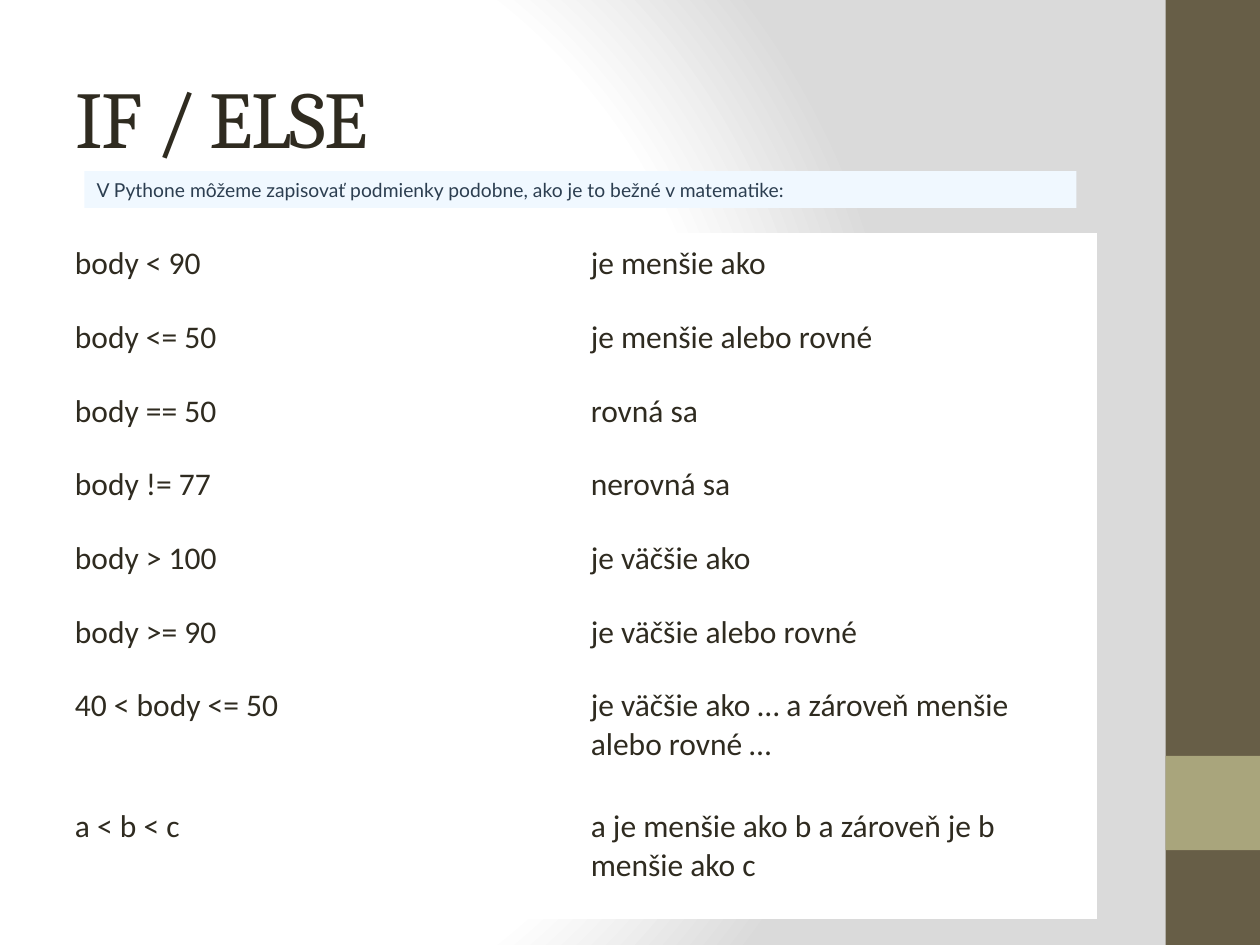
from lxml import etree
from pptx import Presentation
from pptx.dml.color import RGBColor
from pptx.enum import shapes, text
from pptx.oxml import ns
from pptx.util import Cm, Pt

INK = "2F2B20"
COMPARISONS = [
    ("body < 90", "je menšie ako"),
    ("body <= 50", "je menšie alebo rovné"),
    ("body == 50", "rovná sa"),
    ("body != 77", "nerovná sa"),
    ("body > 100", "je väčšie ako"),
    ("body >= 90", "je väčšie alebo rovné"),
    ("40 < body <= 50", "je väčšie ako … a zároveň menšie alebo rovné …"),
    ("a < b < c", "a je menšie ako b a zároveň je b menšie ako c"),
]


def paint(fill, color):
    fill.solid()
    fill.fore_color.rgb = RGBColor.from_string(color)


def add_text(frame, content, size, font, color):
    paragraph = frame.paragraphs[0]
    paragraph.alignment = text.PP_ALIGN.LEFT
    run = paragraph.add_run()
    run.text = content
    run.font.size = Pt(size)
    run.font.name = font
    run.font.color.rgb = RGBColor.from_string(color)
    return run


def add_block(slide, left, top, width, height, color):
    block = slide.shapes.add_shape(
        shapes.MSO_SHAPE.RECTANGLE, Cm(left), Cm(top), Cm(width), Cm(height))
    block.shadow.inherit = False
    paint(block.fill, color)
    block.line.fill.background()
    return block


def add_background(slide):
    fill = slide.background.fill
    fill.gradient()
    gradient = slide.background._cSld.find(".//" + ns.qn("a:gradFill"))
    for child in list(gradient):
        gradient.remove(child)
    stops = etree.SubElement(gradient, ns.qn("a:gsLst"))
    for position, color in ((0, "FFFFFF"), (75, "FFFFFF"), (100, "DADADA")):
        stop = etree.SubElement(stops, ns.qn("a:gs"), pos=str(position * 1000))
        etree.SubElement(stop, ns.qn("a:srgbClr"), val=color)
    shade = etree.SubElement(gradient, ns.qn("a:path"), path="circle")
    etree.SubElement(shade, ns.qn("a:fillToRect"),
                     l="20000", t="50000", r="100000", b="50000")


def add_sidebar(slide, left, top, width, height):
    add_block(slide, left, top, width, height, "675E47")
    add_block(slide, left, top + 0.8 * height, width, width, "A9A57C")


def add_title(slide, left, top, width, height):
    title = slide.shapes.add_textbox(Cm(left), Cm(top), Cm(width), Cm(height))
    frame = title.text_frame
    frame.word_wrap = True
    frame.vertical_anchor = text.MSO_ANCHOR.MIDDLE
    run = add_text(frame, "IF / ELSE", 46, "Cambria", INK)
    run.font._element.set("spc", "-100")


def add_banner(slide, left, top, width, height):
    banner = add_block(slide, left, top, width, height, "F0F8FF")
    frame = banner.text_frame
    frame.word_wrap = True
    frame.vertical_anchor = text.MSO_ANCHOR.MIDDLE
    add_text(frame, "V Pythone môžeme zapisovať podmienky podobne, "
             "ako je to bežné v matematike:", 11, "Lato", "2C3E50")


def add_comparisons(slide, left, top, width, height):
    tall = 2.44
    short = (height - 2 * tall) / (len(COMPARISONS) - 2)
    table = slide.shapes.add_table(
        len(COMPARISONS), 2, Cm(left), Cm(top), Cm(width), Cm(height)).table
    table.first_row = False
    table.horz_banding = False
    for column in table.columns:
        column.width = Cm(width / 2)
    for index, contents in enumerate(COMPARISONS):
        table.rows[index].height = Cm(short if index < 6 else tall)
        for column, content in enumerate(contents):
            cell = table.cell(index, column)
            paint(cell.fill, "FFFFFF")
            cell.margin_left = cell.margin_right = Cm(0.21)
            cell.margin_top = cell.margin_bottom = Cm(0.21)
            add_text(cell.text_frame, content, 18, "Calibri", INK)


def main():
    presentation = Presentation()
    presentation.slide_width = Cm(25.4)
    presentation.slide_height = Cm(19.05)
    slide = presentation.slides.add_slide(presentation.slide_layouts[6])
    add_background(slide)
    add_sidebar(slide, 23.5, 0, 1.9, 19.05)
    add_title(slide, 1.27, 0.76, 21.16, 3.18)
    add_comparisons(slide, 1.3, 4.72, 20.8, 13.8)
    add_banner(slide, 1.7, 3.45, 20, 0.74)
    presentation.save("out.pptx")


if __name__ == "__main__":
    main()
